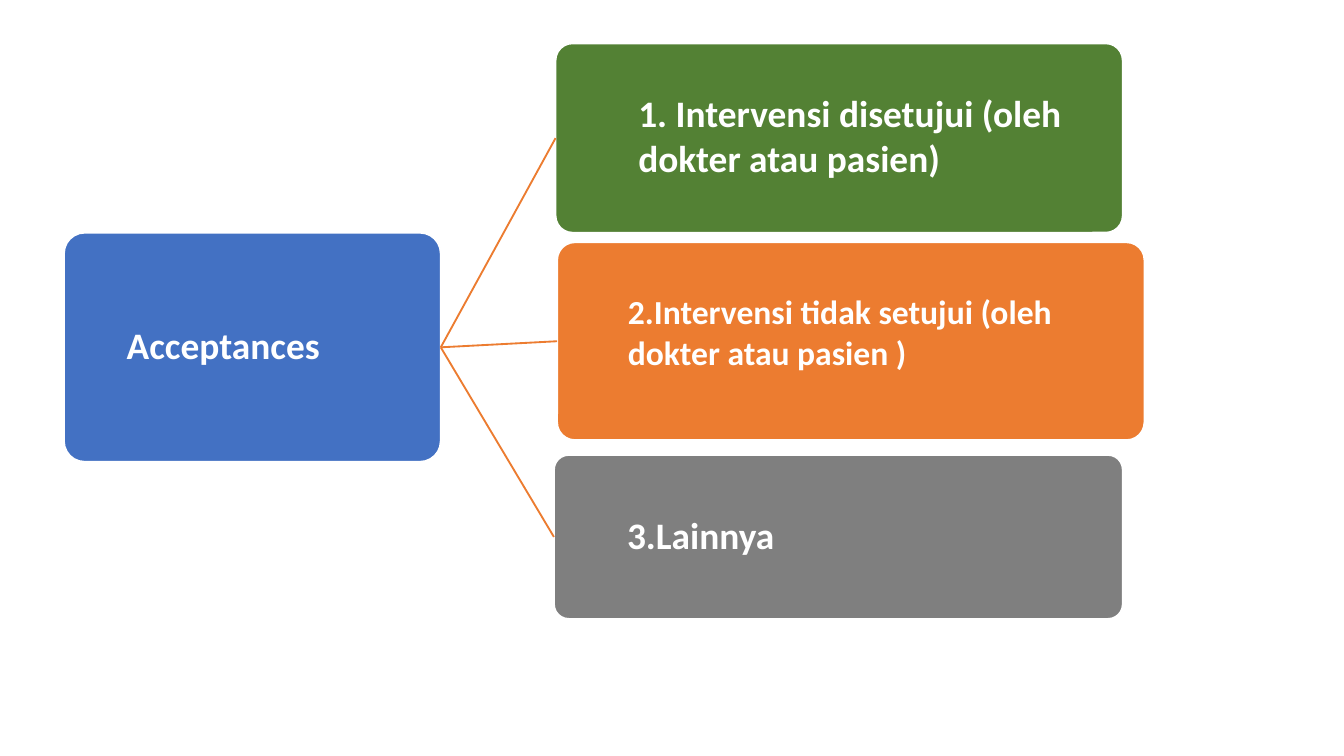
from dataclasses import dataclass

from pptx import Presentation
from pptx.dml.color import RGBColor
from pptx.enum.shapes import MSO_CONNECTOR, MSO_SHAPE
from pptx.enum.text import MSO_ANCHOR, PP_ALIGN
from pptx.oxml.ns import qn
from pptx.util import Cm, Pt

ROUNDED = MSO_SHAPE.ROUNDED_RECTANGLE
STRAIGHT = MSO_CONNECTOR.STRAIGHT
MIDDLE = MSO_ANCHOR.MIDDLE
LEFT = PP_ALIGN.LEFT
BLANK_LAYOUT = 6
LEFT_SITE, RIGHT_SITE = 1, 3


@dataclass(frozen=True)
class Theme:
    """Colours, font and sizes of the diagram."""
    root: RGBColor = RGBColor.from_string("4371C3")
    approved: RGBColor = RGBColor.from_string("538134")
    declined: RGBColor = RGBColor.from_string("EC7C30")
    other: RGBColor = RGBColor.from_string("7F7F7F")
    link: RGBColor = RGBColor.from_string("EC7C30")
    white: RGBColor = RGBColor.from_string("FFFFFF")
    font: str = "Calibri"
    large: Pt = Pt(20)
    medium: Pt = Pt(18)
    stroke: Pt = Pt(1)
    corner: float = 0.09


@dataclass(frozen=True)
class Choice:
    """One node: wording, look, box and text insets in centimetres."""
    wording: str
    fill: RGBColor
    size: Pt
    box: tuple
    indent: float
    lift: float = 0.1


THEME = Theme()
ACCEPTANCES = Choice("Acceptances", THEME.root, THEME.large,
                     (0, 3.58, 7.12, 4.33), 1.07)
ANSWERS = (
    Choice("1. Intervensi disetujui (oleh dokter atau pasien)", THEME.approved,
           THEME.large, (9.29, 0, 10.72, 3.58), 1.47),
    Choice("2.Intervensi tidak setujui (oleh dokter atau pasien )", THEME.declined,
           THEME.medium, (9.32, 3.76, 11.1, 3.74), 1.24, 0.36),
    Choice("3.Lainnya", THEME.other,
           THEME.large, (9.26, 7.78, 10.75, 3.1), 1.3),
)


def add_node(slide, choice, left, top):
    """Place one rounded node relative to the diagram's corner."""
    x, y, width, height = choice.box
    node = slide.shapes.add_shape(
        ROUNDED, Cm(left + x), Cm(top + y), Cm(width), Cm(height))
    node.adjustments[0] = THEME.corner
    node.shadow.inherit = False
    node.fill.solid()
    node.fill.fore_color.rgb = choice.fill
    node.line.color.rgb = THEME.white
    node.line.width = THEME.stroke

    frame = node.text_frame
    frame.word_wrap = True
    frame.vertical_anchor = MIDDLE
    frame.margin_left = Cm(choice.indent)
    frame.margin_right = Cm(0.85)
    frame.margin_top = 0
    frame.margin_bottom = Cm(choice.lift)
    label = frame.paragraphs[0]
    label.text = choice.wording
    label.alignment = LEFT
    label.font.name = THEME.font
    label.font.size = choice.size
    label.font.bold = True
    label.font.color.rgb = THEME.white
    return node


def add_link(slide, root, answer):
    """Join the right side of the root to the left side of an answer."""
    link = slide.shapes.add_connector(STRAIGHT, 0, 0, 0, 0)
    link.begin_connect(root, RIGHT_SITE)
    link.end_connect(answer, LEFT_SITE)
    link.line.color.rgb = THEME.link
    link.line.width = THEME.stroke
    properties = link._element.spPr
    properties.append(properties.makeelement(qn("a:effectLst"), {}))


def add_decision_tree(slide, left, top):
    """Draw the root, its answers and the links between them."""
    root = add_node(slide, ACCEPTANCES, left, top)
    for choice in ANSWERS:
        answer = add_node(slide, choice, left, top)
        add_link(slide, root, answer)


def main():
    """Build and save the slide."""
    deck = Presentation()
    deck.slide_width, deck.slide_height = Cm(25.4), Cm(14.29)
    slide = deck.slides.add_slide(deck.slide_layouts[BLANK_LAYOUT])
    add_decision_tree(slide, left=1.21, top=0.82)
    deck.save("out.pptx")


if __name__ == "__main__":
    main()
